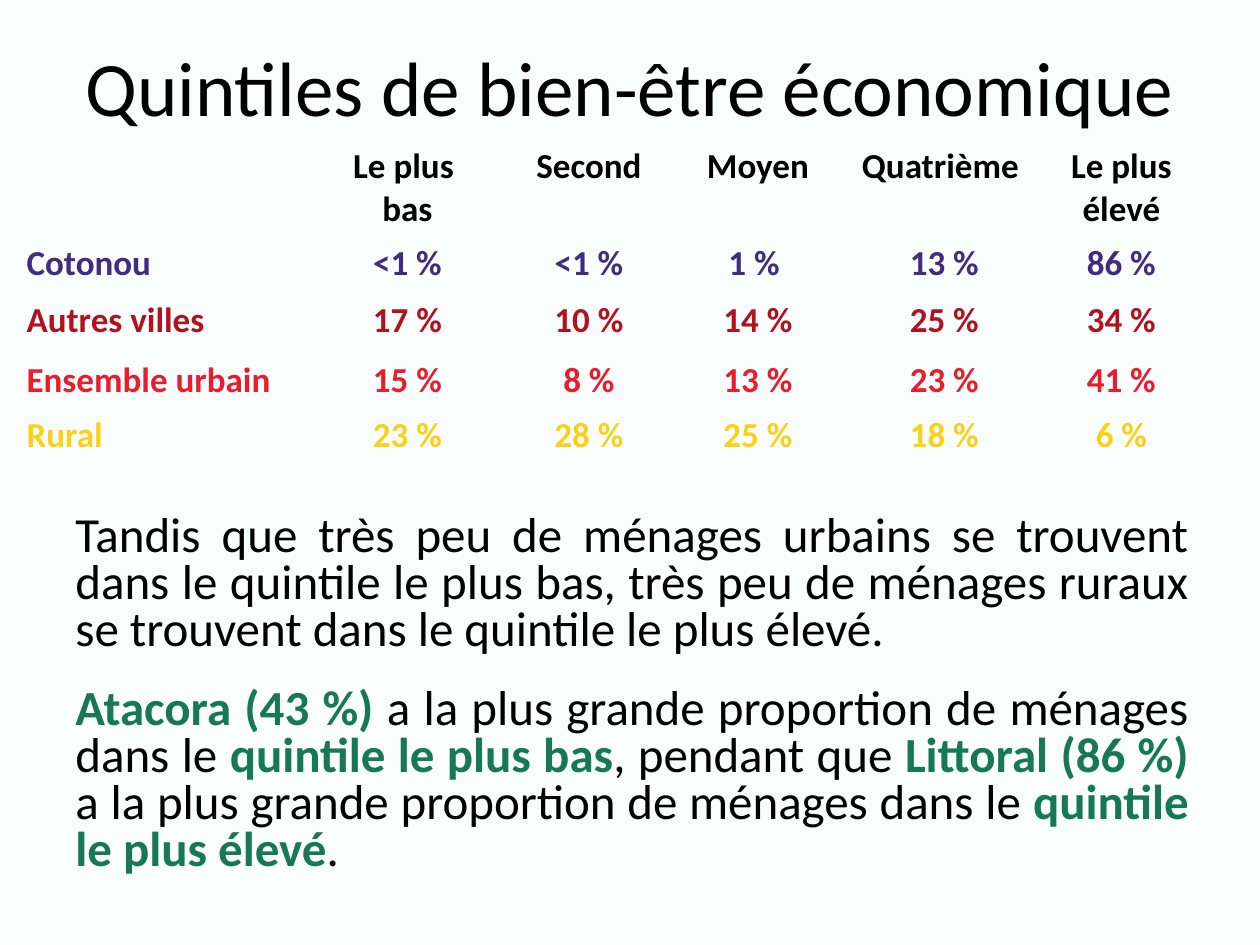
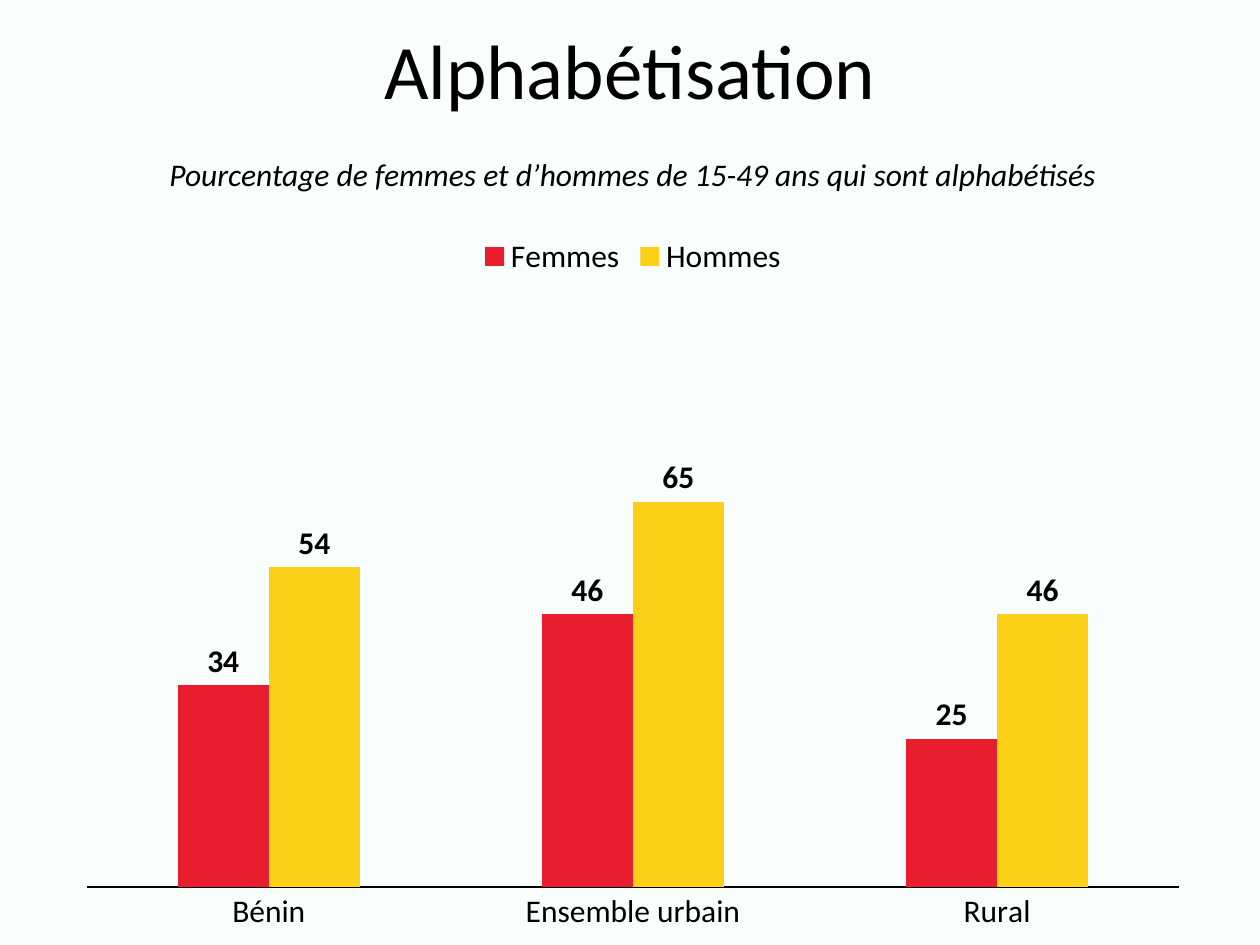
from lxml import etree
from pptx import Presentation
from pptx.chart.data import CategoryChartData
from pptx.dml.color import RGBColor
from pptx.enum import chart as chart_enum, text
from pptx.oxml import ns
from pptx.util import Emu, Pt

PX = 914400 / 126
FONT = "Calibri"
COLORS = {
    "background": "F9FEFC", "ink": "000000", "green": "177858",
    "purple": "422C81", "crimson": "B2121F", "red": "E81D2E", "yellow": "FBD017",
}
PLAIN_TABLE_STYLE = "{2D5ABB26-0587-4C30-8999-92F81FD0307C}"

# Content: wealth quintiles
QUINTILE_TITLE = "Quintiles de bien-être économique"
QUINTILE_ROWS = [
    ("ink", ["", "Le plus \nbas", "Second", "Moyen", "Quatrième ", "Le plus élevé"]),
    ("purple", ["Cotonou", "<1 %", "<1 %", "1 % ", "13 %", "86 %"]),
    ("crimson", ["Autres villes", "17 %", "10 %", "14 %", "25 %", "34 %"]),
    ("red", ["Ensemble urbain", "15 %", "8 %", "13 %", "23 %", "41 %"]),
    ("yellow", ["Rural", "23 %", "28 %", "25 %", "18 %", "6 %"]),
]
COLUMN_WIDTHS = [291, 205, 158, 180, 193, 161]
ROW_HEIGHTS = [92, 57, 60, 54, 53]
HIGHLIGHT = {"bold": True, "color": "green"}
FINDINGS = [
    [("Tandis que très peu de ménages urbains se trouvent dans le quintile le plus bas, "
      "très peu de ménages ruraux se trouvent dans le quintile le plus élevé.", {})],
    [("Atacora (43 %) ", HIGHLIGHT),
     ("a la plus grande proportion de ménages dans le ", {}),
     ("quintile le plus bas", HIGHLIGHT),
     (", pendant que ", {}),
     ("Littoral (86 %) ", HIGHLIGHT),
     ("a la plus grande proportion de ménages dans le ", {}),
     ("quintile le plus élevé", HIGHLIGHT),
     (".", {})],
]

# Content: literacy
LITERACY_TITLE = "Alphabétisation"
LITERACY_SUBTITLE = "Pourcentage de femmes et d’hommes de 15-49 ans qui sont alphabétisés"
AREAS = ["Bénin", "Ensemble urbain", "Rural"]
LITERACY = [("Femmes", "red", [34, 46, 25]), ("Hommes", "yellow", [54, 65, 46])]
PLOT_LAYOUT = {"x": 0.02, "y": 0.1, "w": 0.96, "h": 0.82}


def px(*lengths):
    return [Emu(round(length * PX)) for length in lengths]


def rgb(name):
    return RGBColor.from_string(COLORS[name])


def style_font(font, size, color="ink", **values):
    font.name, font.size = FONT, Pt(size)
    font.color.rgb = rgb(color)
    for name, value in values.items():
        setattr(font, name, value)


def write(frame, paragraphs, size, paragraph_format, **base):
    """Fill a text frame from lists of (words, font values) runs."""
    for index, runs in enumerate(paragraphs):
        paragraph = frame.add_paragraph() if index else frame.paragraphs[0]
        for name, value in paragraph_format.items():
            setattr(paragraph, name, value)
        for words, values in runs:
            run = paragraph.add_run()
            run.text = words
            style_font(run.font, size, **{**base, **values})


def add_text(slide, box, paragraphs, size, paragraph_format,
             anchor=text.MSO_ANCHOR.TOP, **base):
    frame = slide.shapes.add_textbox(*px(*box)).text_frame
    frame.word_wrap = True
    frame.vertical_anchor = anchor
    write(frame, paragraphs, size, paragraph_format, **base)


def add_slide(presentation, title, title_height):
    slide = presentation.slides.add_slide(presentation.slide_layouts[6])
    fill = slide.background.fill
    fill.solid()
    fill.fore_color.rgb = rgb("background")
    add_text(slide, (0, 0, 1260, title_height), [[(title, {})]], 44,
             {"alignment": text.PP_ALIGN.CENTER, "line_spacing": 0.9},
             text.MSO_ANCHOR.MIDDLE)
    return slide


def add_quintile_table(slide):
    box = px(14, 139, sum(COLUMN_WIDTHS), sum(ROW_HEIGHTS))
    frame = slide.shapes.add_table(len(ROW_HEIGHTS), len(COLUMN_WIDTHS), *box)
    table = frame.table
    table.first_row = table.horz_banding = False
    next(frame.element.iter(ns.qn("a:tableStyleId"))).text = PLAIN_TABLE_STYLE
    for column, width in zip(table.columns, px(*COLUMN_WIDTHS)):
        column.width = width
    for row, height in zip(table.rows, px(*ROW_HEIGHTS)):
        row.height = height
    for row, (color, values) in enumerate(QUINTILE_ROWS):
        for column, value in enumerate(values):
            cell = table.cell(row, column)
            cell.fill.background()
            align = text.PP_ALIGN.CENTER if column else text.PP_ALIGN.LEFT
            if value:
                write(cell.text_frame, [[(line, {})] for line in value.split("\n")], 20,
                      {"alignment": align}, color=color, bold=True)


def place_plot(chart):
    """Fix the inner plot area as fractions of the chart."""
    plot_area = next(chart.element.iter(ns.qn("c:plotArea")))
    for layout in plot_area.findall(ns.qn("c:layout")):
        plot_area.remove(layout)
    layout = etree.Element(ns.qn("c:layout"))
    manual = etree.SubElement(layout, ns.qn("c:manualLayout"))
    settings = {"layoutTarget": "inner", "xMode": "edge", "yMode": "edge", **PLOT_LAYOUT}
    for name, value in settings.items():
        etree.SubElement(manual, ns.qn(f"c:{name}"), val=str(value))
    plot_area.insert(0, layout)


def add_literacy_chart(slide):
    data = CategoryChartData(number_format="0")
    data.categories = AREAS
    for name, _, values in LITERACY:
        data.add_series(name, values)
    chart = slide.shapes.add_chart(chart_enum.XL_CHART_TYPE.COLUMN_CLUSTERED,
                                   *px(64, 222, 1138, 723), data).chart
    style_font(chart.font, 10)
    chart.has_title = False
    chart.has_legend = True
    chart.legend.position = chart_enum.XL_LEGEND_POSITION.TOP
    chart.legend.include_in_layout = False
    style_font(chart.legend.font, 18)

    # Axes
    value_axis, category_axis = chart.value_axis, chart.category_axis
    for name, value in {"minimum_scale": 0, "maximum_scale": 100,
                        "has_major_gridlines": False, "visible": False}.items():
        setattr(value_axis, name, value)
    category_axis.major_tick_mark = chart_enum.XL_TICK_MARK.NONE
    style_font(category_axis.tick_labels.font, 18)
    category_axis.format.line.color.rgb = rgb("ink")
    category_axis.format.line.width = Pt(0.75)

    # Columns and their values
    plot = chart.plots[0]
    for name, value in {"gap_width": 200, "overlap": 0, "vary_by_categories": False}.items():
        setattr(plot, name, value)
    for series, (_, color, _) in zip(plot.series, LITERACY):
        series.format.fill.solid()
        series.format.fill.fore_color.rgb = rgb(color)
        labels = series.data_labels
        for name, value in {"show_value": True, "number_format": "0",
                            "number_format_is_linked": False,
                            "position": chart_enum.XL_LABEL_POSITION.OUTSIDE_END}.items():
            setattr(labels, name, value)
        style_font(labels.font, 18, bold=True)
    place_plot(chart)


def main():
    presentation = Presentation()
    presentation.slide_width, presentation.slide_height = px(1260, 945)

    # Slide 1: quintiles
    slide = add_slide(presentation, QUINTILE_TITLE, 183)
    add_text(slide, (63, 509, 1138, 402), FINDINGS, 28,
             {"alignment": text.PP_ALIGN.JUSTIFY, "line_spacing": 0.8, "space_after": Pt(18)})
    add_quintile_table(slide)

    # Slide 2: literacy
    slide = add_slide(presentation, LITERACY_TITLE, 149)
    add_literacy_chart(slide)
    add_text(slide, (3, 149, 1260, 50), [[(LITERACY_SUBTITLE, {})]], 18,
             {"alignment": text.PP_ALIGN.CENTER}, italic=True)

    presentation.save("out.pptx")


if __name__ == "__main__":
    main()
